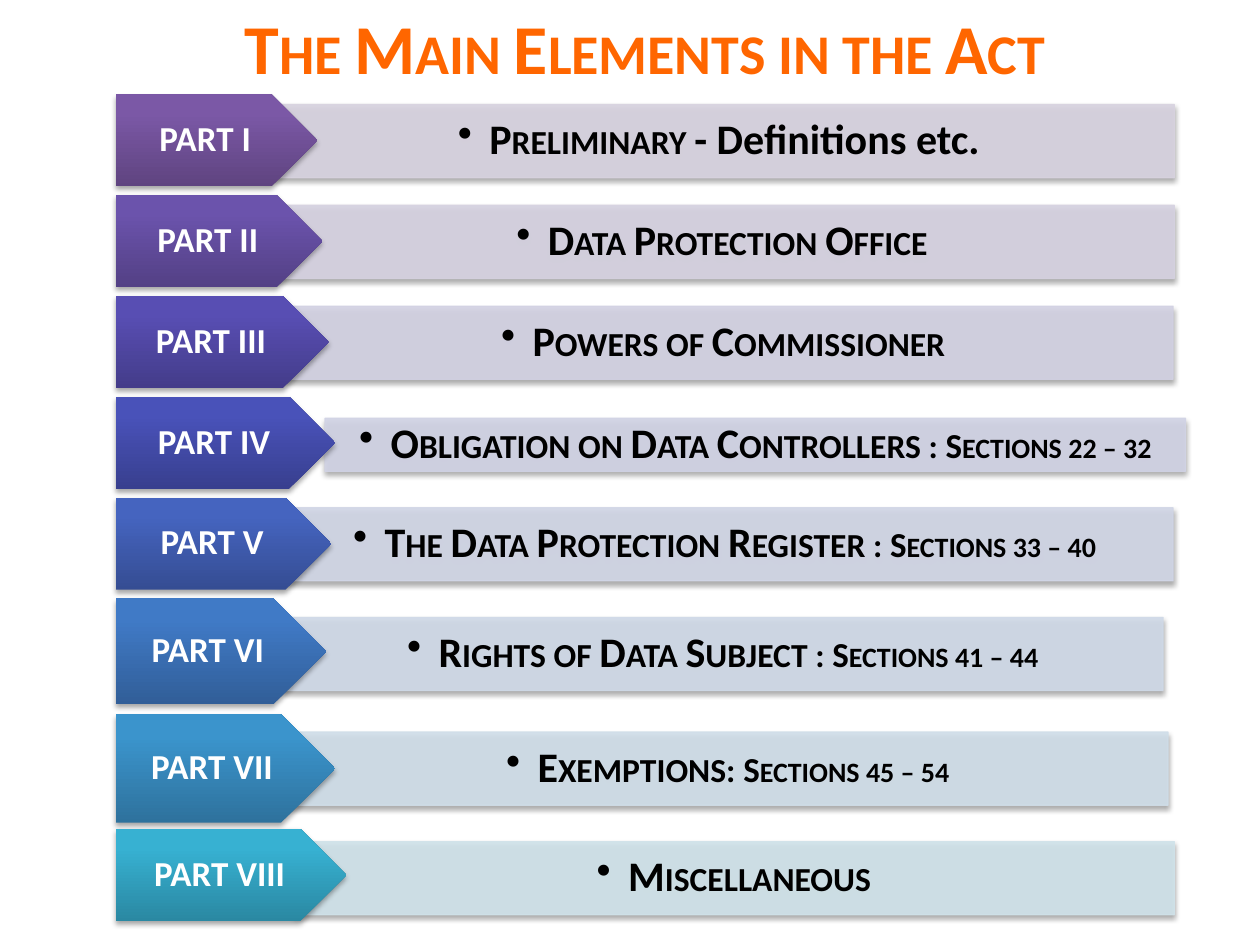
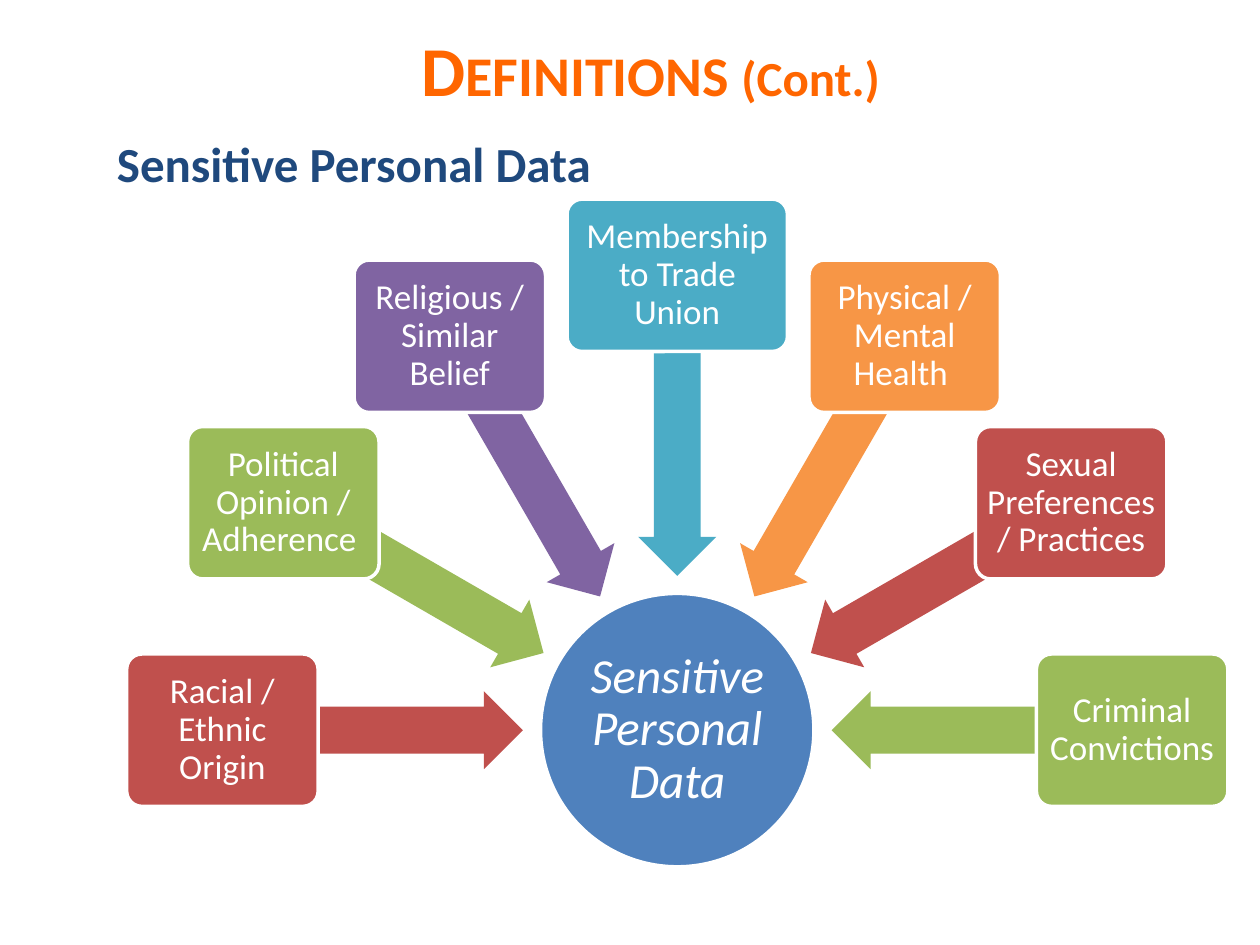
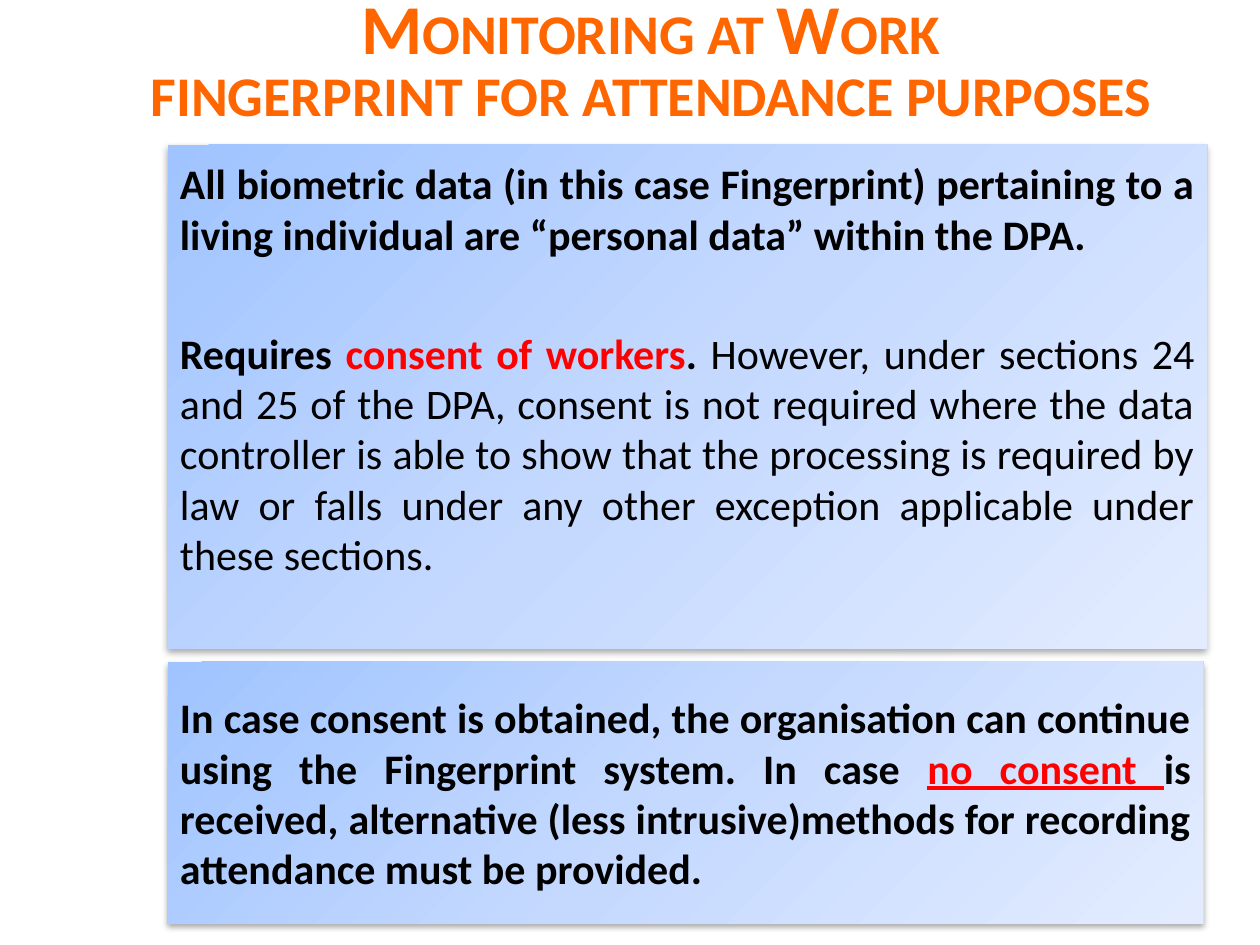
from math import cos, radians, sin

from lxml import etree
from pptx import Presentation
from pptx.dml.color import RGBColor
from pptx.enum.shapes import MSO_SHAPE as SHAPE
from pptx.enum.text import MSO_ANCHOR as ANCHOR, MSO_AUTO_SIZE as AUTO, PP_ALIGN as ALIGN
from pptx.oxml.ns import qn
from pptx.util import Inches, Pt

COLORS = {
    "title": "FF6600", "heading": "1F497D", "black": "000000", "white": "FFFFFF", "alert": "FF0000",
    "blue": "4F81BD", "red": "C0504D", "green": "9BBB59", "purple": "8064A2",
    "aqua": "4BACC6", "orange": "F79646",
    "panel_dark": "A0C4FF", "panel_mid": "C5D9FF", "panel_light": "E3ECFF",
    "bar1": "D8D3E0", "dark1": "5F4480", "light1": "7B58A6",
    "bar2": "D6D2E1", "dark2": "534085", "light2": "6B53AC",
    "bar3": "D3D2E3", "dark3": "443C8A", "light3": "584EB3",
    "bar4": "D1D3E5", "dark4": "383F8F", "light4": "4952B9",
    "bar5": "D1D6E6", "dark5": "354D93", "light5": "4564BF",
    "bar6": "D0DAE8", "dark6": "315E98", "light6": "407AC6",
    "bar7": "D0DEE9", "dark7": "2E729D", "light7": "3B94CC",
    "bar8": "D0E3EA", "dark8": "2A88A2", "light8": "37B1D2",
}

TITLE = {"size": Pt(40), "color": "title", "bold": True, "cap": "small"}
TITLE_NOTE = {"size": Pt(28), "color": "title", "bold": True}
HEADING = {"size": Pt(28), "color": "heading", "bold": True}
PART = {"size": Pt(20), "color": "white", "bold": True}
TOPIC = {"size": Pt(24), "color": "black", "bold": True, "cap": "small"}
SECTIONS = {**TOPIC, "size": Pt(20)}
STRONG = {"size": Pt(24), "color": "black", "bold": True}
PLAIN = {**STRONG, "bold": False}
ALERT = {**STRONG, "color": "alert"}
HUB = {"size": Pt(28), "color": "white", "italic": True}
LABEL = {"size": Pt(20), "color": "white"}

PARTS = [
    ("PART I", (0.75, 1.6, 0.73), (2.09, 0.83, 7.23, 0.58),
     [("Preliminary ", TOPIC), ("- Definitions etc.", STRONG)]),
    ("PART II", (1.55, 1.64, 0.73), (2.14, 1.63, 7.18, 0.58),
     [("Data Protection Office", TOPIC)]),
    ("PART III", (2.35, 1.69, 0.73), (2.17, 2.43, 7.14, 0.58),
     [("Powers of Commissioner", TOPIC)]),
    ("PART IV", (3.15, 1.74, 0.73), (2.58, 3.32, 6.83, 0.42),
     [("Obligation on Data Controllers : ", TOPIC), ("Sections 22 – 32", SECTIONS)]),
    ("PART V", (3.95, 1.71, 0.73), (2.19, 4.03, 7.12, 0.58),
     [("The Data Protection Register : ", TOPIC), ("Sections 33 – 40", SECTIONS)]),
    ("PART VI", (4.75, 1.67, 0.84), (2.24, 4.9, 6.99, 0.58),
     [("Rights of Data Subject : ", TOPIC), ("Sections 41 – 44", SECTIONS)]),
    ("PART VII", (5.67, 1.74, 0.86), (2.28, 5.81, 6.99, 0.58),
     [("Exemptions: ", TOPIC), ("Sections 45 – 54", SECTIONS)]),
    ("PART VIII", (6.58, 1.83, 0.73), (2.33, 6.68, 6.99, 0.58),
     [("Miscellaneous", TOPIC)]),
]

CATEGORIES = [
    ("Racial / Ethnic Origin", "red", 1.52),
    ("Political Opinion / Adherence ", "green", 1.52),
    ("Religious / Similar Belief", "purple", 1.52),
    ("Membership to Trade Union", "aqua", 1.75),
    ("Physical / Mental Health ", "orange", 1.52),
    ("Sexual Preferences / Practices", "red", 1.52),
    ("Criminal Convictions", "green", 1.52),
]


def rgb(name):
    return RGBColor.from_string(COLORS[name])


def inches(box):
    return [Inches(v) for v in box]


def xml_color(parent, name, alpha=None):
    clr = etree.SubElement(parent, qn("a:srgbClr"), val=COLORS[name])
    if alpha:
        etree.SubElement(clr, qn("a:alpha"), val=str(alpha * 1000))


def write(p, runs, align=ALIGN.CENTER, **fmt):
    p.alignment = align
    for key, value in fmt.items():
        setattr(p, key, value)
    for text, style in runs:
        r = p.add_run()
        r.text = text
        r.font.name = "Calibri"
        for key, value in style.items():
            if key == "color":
                r.font.color.rgb = rgb(value)
            elif key == "cap":
                r.font._element.set("cap", value)
            else:
                setattr(r.font, key, value)


def frame(sp, anchor=ANCHOR.MIDDLE, insets=(0.1, 0.05, 0.1, 0.05)):
    tf = sp.text_frame
    tf.word_wrap, tf.auto_size, tf.vertical_anchor = True, AUTO.NONE, anchor
    for side, value in zip(("left", "top", "right", "bottom"), insets):
        setattr(tf, f"margin_{side}", Inches(value))
    return tf


def shape(s, kind, box, fill=None, line=None, adj=()):
    sp = s.shapes.add_shape(kind, *inches(box))
    sp.shadow.inherit = False
    for i, value in enumerate(adj):
        sp.adjustments[i] = value
    if fill:
        sp.fill.solid()
        sp.fill.fore_color.rgb = rgb(fill)
    if line:
        sp.line.color.rgb = rgb(line)
        sp.line.width = Pt(2)
    else:
        sp.line.fill.background()
    return sp


def gradient(sp, stops, angle):
    sp.fill.gradient()
    sp.fill.gradient_angle = angle
    lst = sp._element.spPr.find(".//" + qn("a:gsLst"))
    for gs in list(lst):
        lst.remove(gs)
    for pos, name in stops:
        xml_color(etree.SubElement(lst, qn("a:gs"), pos=str(pos * 1000)), name)


def shadow(sp, alpha, blur, dist):
    effects = sp._element.spPr.find(qn("a:effectLst"))
    outer = etree.SubElement(effects, qn("a:outerShdw"), blurRad=str(Pt(blur)), dist=str(Pt(dist)),
                             dir="5400000", rotWithShape="0")
    xml_color(outer, "black", alpha)


def title_slide(prs, box, runs):
    s = prs.slides.add_slide(prs.slide_layouts[5])
    sp = s.shapes.title
    sp.left, sp.top, sp.width, sp.height = inches(box)
    write(frame(sp).paragraphs[0], runs)
    return s


def textbox(s, box, runs, align, anchor, insets=(0.1, 0.05, 0.1, 0.05)):
    sp = s.shapes.add_textbox(*inches(box))
    write(frame(sp, anchor, insets).paragraphs[0], runs, align)


def topic_bar(s, box, color, runs):
    sp = shape(s, SHAPE.FLOWCHART_PROCESS, box, color)
    sp.line.color.rgb = rgb(color)
    sp.line.width = Pt(0.75)
    for clr in sp._element.spPr.iter(qn("a:srgbClr")):
        etree.SubElement(clr, qn("a:alpha"), val="90000")
    shadow(sp, 35, 3.1, 1.8)
    p = frame(sp, insets=(0.02,) * 4).paragraphs[0]
    p.level = 1
    pPr = p._p.get_or_add_pPr()
    pPr.set("marL", str(Inches(0.25)))
    pPr.set("indent", str(-Inches(0.25)))
    etree.SubElement(pPr, qn("a:buChar"), char="•")
    write(p, runs, line_spacing=0.9)


def part_plate(s, box, n, text):
    sp = shape(s, SHAPE.PENTAGON, box)
    gradient(sp, [(0, f"dark{n}"), (80, f"light{n}"), (100, f"light{n}")], 90)
    shadow(sp, 35, 3.1, 1.8)
    tf = frame(sp, insets=(0.08, 0.04, 0.08, 0.04))
    write(tf.paragraphs[0], [(text, PART)], line_spacing=0.9)


def elements_slide(prs):
    s = title_slide(prs, (0.83, 0.08, 8.58, 0.58), [("The Main Elements in the Act", TITLE)])
    for n, (part, (top, width, height), bar, runs) in enumerate(PARTS, 1):
        topic_bar(s, bar, f"bar{n}", runs)
        part_plate(s, (0.92, top, width, height), n, part)


def radial(s, box):
    left, top, size, _ = box
    cx, cy = left + size / 2, top + size / 2

    def around(angle, radius, w, h):
        a = radians(angle)
        return cx + radius * cos(a) - w / 2, cy + radius * sin(a) - h / 2, w, h

    hub = shape(s, SHAPE.OVAL, box, "blue", "white")
    write(frame(hub, insets=(0.02,) * 4).paragraphs[0],
          [("Sensitive Personal Data", HUB)], line_spacing=0.9)
    for i, (text, color, width) in enumerate(CATEGORIES):
        angle = 180 + 30 * i
        arrow = shape(s, SHAPE.LEFT_ARROW, around(angle, 2.42, 2.39, 0.62), color, adj=(0.6, 0.5))
        arrow.rotation = angle % 360
        card = shape(s, SHAPE.ROUNDED_RECTANGLE, around(angle, 3.61, width, 1.21),
                     color, "white", (0.1,))
        write(frame(card, insets=(0.04,) * 4).paragraphs[0], [(text, LABEL)], line_spacing=0.9)


def definitions_slide(prs):
    s = title_slide(prs, (0.75, 0.17, 8.83, 0.75),
                    [("Definitions ", TITLE), ("(Cont.)", TITLE_NOTE)])
    radial(s, (4.29, 4.71, 2.17, 2.17))
    textbox(s, (0.83, 1.01, 4.67, 0.57), [("Sensitive Personal Data", HEADING)],
            ALIGN.LEFT, ANCHOR.TOP)


def panel(s, box, paragraphs, bottom=0.05):
    sp = shape(s, SHAPE.RECTANGLE, box)
    gradient(sp, [(0, "panel_dark"), (50, "panel_mid"), (100, "panel_light")], 315)
    shadow(sp, 32, 3.5, 2.2)
    tf = frame(sp, insets=(0.1, 0.05, 0.1, bottom))
    for i, runs in enumerate(paragraphs):
        p = tf.add_paragraph() if i else tf.paragraphs[0]
        write(p, runs, ALIGN.JUSTIFY, space_before=Pt(39 if i else 0))


def monitoring_slide(prs):
    s = title_slide(prs, (0.75, 0.33, 8.83, 0.75),
                    [("fingerprint for attendance purposes", TITLE)])
    panel(s, (1.33, 1.15, 8.25, 4), [
        [("All biometric data (in this case Fingerprint) pertaining to a living individual "
          "are “personal data” within the DPA.", STRONG)],
        [("Requires ", STRONG), ("consent of workers", ALERT), (". ", STRONG),
         ("However, under sections 24 and 25 of the DPA, consent is not required where the "
          "data controller is able to show that the processing is required by law or falls "
          "under any other exception applicable under these sections.", PLAIN)],
    ], bottom=0.5)
    panel(s, (1.33, 5.25, 8.22, 2.08), [
        [("In case consent is obtained, the organisation can continue using the Fingerprint "
          "system. In case ", STRONG), ("no consent ", {**ALERT, "underline": True}),
         ("is received, alternative (less intrusive)methods for recording attendance must "
          "be provided.", STRONG)],
    ])
    textbox(s, (0.75, 0, 8.83, 1.08), [("Monitoring at Work", TITLE)],
            ALIGN.CENTER, ANCHOR.MIDDLE, (0.1, 0, 0.1, 0.66))


def main():
    prs = Presentation()
    prs.slide_width, prs.slide_height = Inches(10), Inches(7.5)
    elements_slide(prs)
    definitions_slide(prs)
    monitoring_slide(prs)
    prs.save("out.pptx")


if __name__ == "__main__":
    main()
